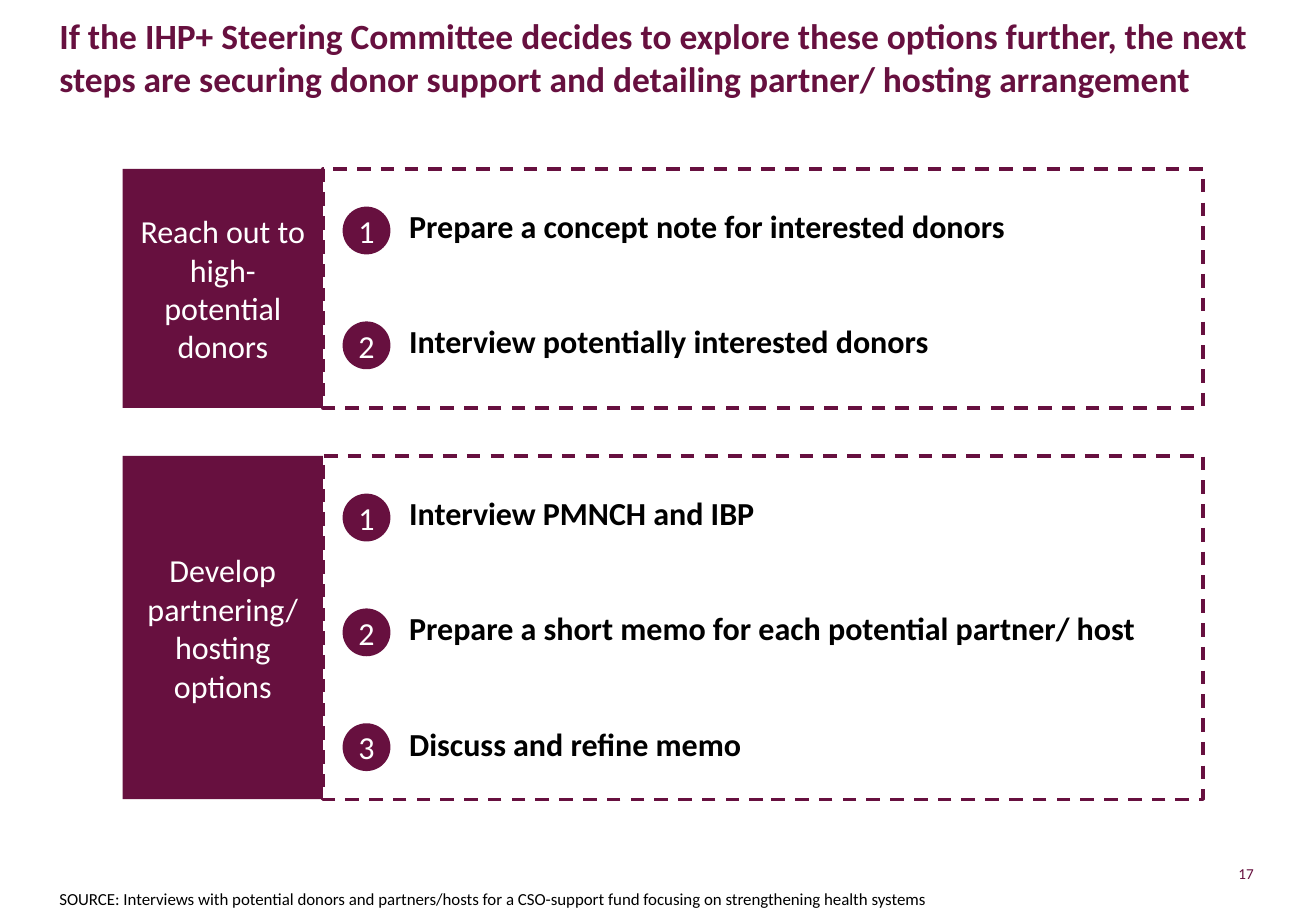
from lxml import etree
from pptx import Presentation
from pptx import util as u
from pptx.dml.color import RGBColor
from pptx.enum import dml, shapes, text
from pptx.oxml.ns import qn

PLUM = RGBColor(0x67, 0x10, 0x3F)
WHITE = RGBColor(0xFF, 0xFF, 0xFF)
BLACK = RGBColor(0, 0, 0)
FONT = "Calibri"
WIDE, HIGH = 10.83, 7.5
UNIT = WIDE / 27.5  # grid cell: the side of a number badge
HEAD = 4.19         # columns taken by a panel's heading
STEP = 2.4          # rows from one step to the next
MID = text.MSO_ANCHOR.MIDDLE
LOW = text.MSO_ANCHOR.BOTTOM
LEFT, RIGHT, CENTER = (text.PP_ALIGN.LEFT, text.PP_ALIGN.RIGHT,
                       text.PP_ALIGN.CENTER)

# Panels: top row, rows high, heading, steps
PANELS = [
    (3.53, 5, "Reach out to high-potential donors",
     ["Prepare a concept note for interested donors",
      "Interview potentially interested donors"]),
    (9.53, 7.18, "Develop partnering/ hosting options",
     ["Interview PMNCH and IBP",
      "Prepare a short memo for each potential partner/ host",
      "Discuss and refine memo"]),
]


def cells(*box):
    return [u.Inches(n * UNIT) for n in box]


def place(holder, box):
    holder.left, holder.top, holder.width, holder.height = cells(*box)


def write(shape, lines, size, color, align=LEFT, anchor=text.MSO_ANCHOR.TOP,
          bold=False, inset=0.0, gap=0):
    frame = shape.text_frame
    frame.word_wrap = True
    frame.auto_size = text.MSO_AUTO_SIZE.NONE
    frame.vertical_anchor = anchor
    frame.margin_left = frame.margin_right = u.Inches(inset)
    frame.margin_top = frame.margin_bottom = u.Inches(inset / 2)
    for i, line in enumerate(lines):
        para = frame.paragraphs[0] if i == 0 else frame.add_paragraph()
        props = para._p.get_or_add_pPr()
        props.set("marL", "0")
        props.set("indent", "0")
        etree.SubElement(props, qn("a:buNone"))
        para.alignment = align
        para.space_before = u.Pt(gap if i else 0)
        run = para.add_run()
        run.text = line
        font = run.font
        font.name, font.size, font.bold = FONT, u.Pt(size), bold
        font.color.rgb = color


def block(slide, kind, box, fill=None):
    shape = slide.shapes.add_shape(kind, *cells(*box))
    shape.shadow.inherit = False
    if fill is None:
        # Dashed outline
        shape.fill.background()
        shape.line.color.rgb = PLUM
        shape.line.width = u.Pt(2)
        shape.line.dash_style = dml.MSO_LINE.DASH
    else:
        shape.fill.solid()
        shape.fill.fore_color.rgb = fill
        shape.line.fill.background()
    return shape


def title(slide, box):
    holder = slide.shapes.title
    place(holder, box)
    write(holder, ["If the IHP+ Steering Committee decides to explore these "
                   "options further, the next steps are securing donor "
                   "support and detailing partner/ hosting arrangement"],
          21, PLUM, anchor=LOW, bold=True)


def panel(slide, box, head, steps, holder):
    left, top, wide, high = box
    rect = shapes.MSO_SHAPE.RECTANGLE
    edge = left + HEAD
    first = top + 0.79
    # Heading and frame
    label = block(slide, rect, (left, top, HEAD, high), PLUM)
    write(label, [head], 19, WHITE, CENTER, MID, inset=0.1)
    block(slide, rect, (edge, top, wide - HEAD, high))
    # Steps
    place(holder, (edge + 1.8, first, 16.78, high - 0.79))
    write(holder, steps, 19, BLACK, bold=True, gap=45.5)
    # Number badges
    for i in range(len(steps)):
        badge = block(slide, shapes.MSO_SHAPE.OVAL,
                      (edge + 0.41, first + i * STEP, 1, 1), PLUM)
        write(badge, [str(i + 1)], 19, WHITE, CENTER, MID)


def footer(slide, note, page):
    source = slide.shapes.add_textbox(*cells(*note))
    write(source, ["SOURCE: Interviews with potential donors and "
                   "partners/hosts for a CSO-support fund focusing on "
                   "strengthening health systems"], 10, BLACK, anchor=LOW)
    number = slide.shapes.add_textbox(*cells(*page))
    write(number, ["17"], 9, PLUM, RIGHT, MID)


def main():
    deck = Presentation()
    deck.slide_width, deck.slide_height = u.Inches(WIDE), u.Inches(HIGH)
    slide = deck.slides.add_slide(deck.slide_layouts[3])
    title(slide, (1.24, 0.38, 25, 1.7))
    lists = [slide.placeholders[1], slide.placeholders[2]]
    for (top, high, head, steps), holder in zip(PANELS, lists):
        panel(slide, (2.56, top, 22.58, high), head, steps, holder)
    footer(slide, (1.24, 17.93, 22.68, 1.07), (24.2, 17.85, 2, 0.81))
    deck.save("out.pptx")


if __name__ == "__main__":
    main()
